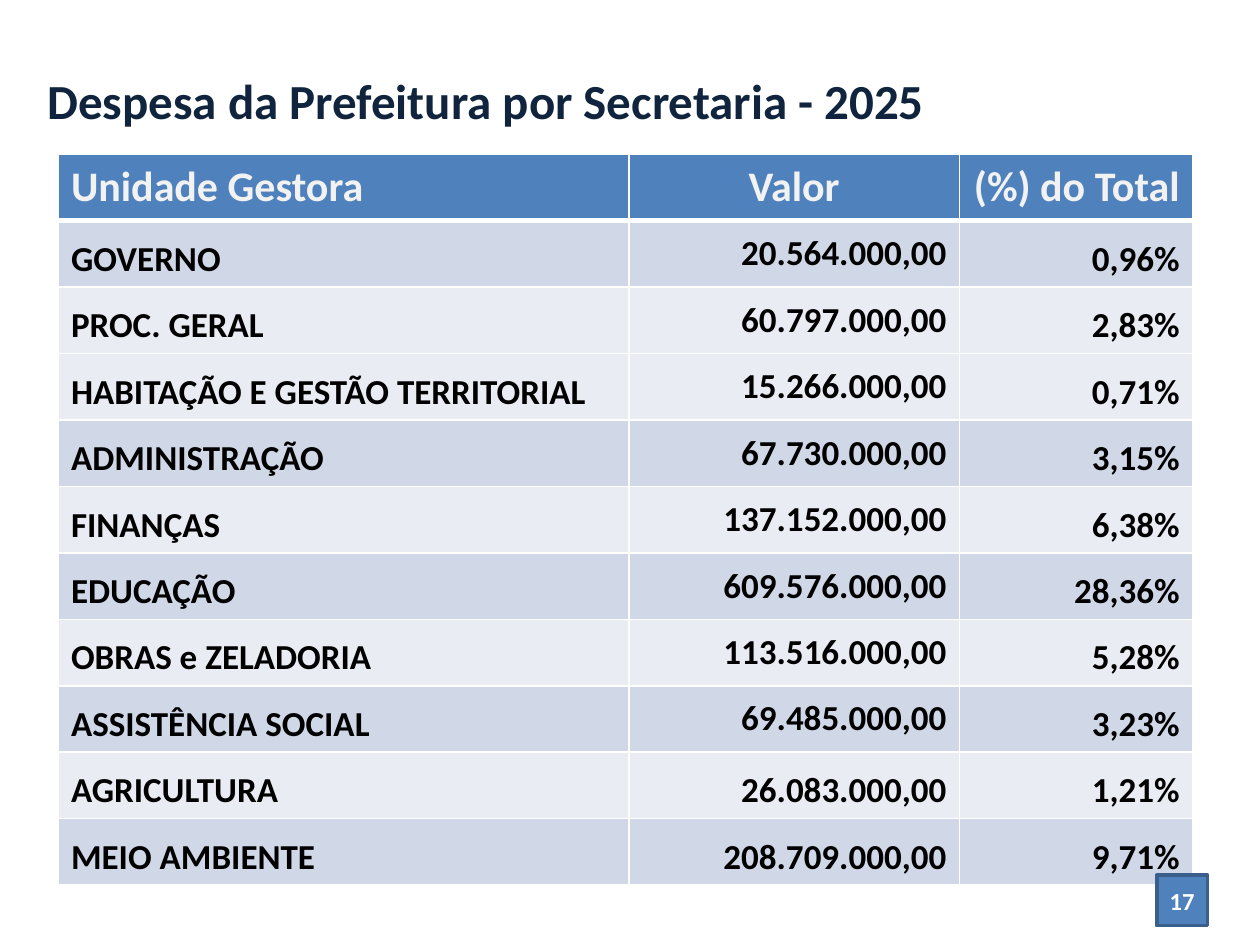
from lxml import etree
from pptx import Presentation
from pptx.dml.color import RGBColor
from pptx.enum import shapes, text
from pptx.oxml import ns
from pptx.util import Pt

NAVY = RGBColor(0x10, 0x24, 0x3E)
BLUE = RGBColor(0x4F, 0x81, 0xBD)
EDGE = RGBColor(0x3A, 0x5F, 0x8B)
DARK_BAND = RGBColor(0xD0, 0xD8, 0xE7)
LIGHT_BAND = RGBColor(0xE9, 0xEC, 0xF3)
PALE = RGBColor(0xF2, 0xF2, 0xF2)
WHITE = RGBColor(0xFF, 0xFF, 0xFF)
BLACK = RGBColor(0, 0, 0)

LEFT, CENTER, RIGHT = text.PP_ALIGN.LEFT, text.PP_ALIGN.CENTER, text.PP_ALIGN.RIGHT
MIDDLE, BOTTOM = text.MSO_ANCHOR.MIDDLE, text.MSO_ANCHOR.BOTTOM

TITLE = "Despesa da Prefeitura por Secretaria - 2025"
PAGE_NUMBER = "17"
HEADER = ("Unidade Gestora", "Valor", "(%) do Total")
EXPENSES = [
    ("GOVERNO", "20.564.000,00", "0,96%", DARK_BAND, MIDDLE),
    ("PROC. GERAL", "60.797.000,00", "2,83%", LIGHT_BAND, MIDDLE),
    ("HABITAÇÃO E GESTÃO TERRITORIAL", "15.266.000,00", "0,71%", LIGHT_BAND, MIDDLE),
    ("ADMINISTRAÇÃO", "67.730.000,00", "3,15%", DARK_BAND, MIDDLE),
    ("FINANÇAS", "137.152.000,00", "6,38%", LIGHT_BAND, MIDDLE),
    ("EDUCAÇÃO", "609.576.000,00", "28,36%", DARK_BAND, MIDDLE),
    ("OBRAS e ZELADORIA", "113.516.000,00", "5,28%", LIGHT_BAND, MIDDLE),
    ("ASSISTÊNCIA SOCIAL", "69.485.000,00", "3,23%", DARK_BAND, MIDDLE),
    ("AGRICULTURA", "26.083.000,00", "1,21%", LIGHT_BAND, BOTTOM),
    ("MEIO AMBIENTE", "208.709.000,00", "9,71%", DARK_BAND, BOTTOM),
]
COLUMN_WIDTHS = (326, 188.8, 133.2)
ROW_HEIGHT = 38
THIN, THICK = 0.96, 3


def write(frame, wording, size, color, align):
    para = frame.paragraphs[0]
    para.text = wording
    para.alignment = align
    font = para.runs[0].font
    font.name, font.size, font.bold = "Calibri", Pt(size), True
    font.color.rgb = color


def add_borders(cell, top, bottom):
    properties = cell._tc.get_or_add_tcPr()
    sides = (("L", THIN), ("R", THIN), ("T", top), ("B", bottom))
    for position, (side, width) in enumerate(sides):
        line = etree.Element(ns.qn(f"a:ln{side}"), w=str(Pt(width)))
        fill = etree.SubElement(line, ns.qn("a:solidFill"))
        etree.SubElement(fill, ns.qn("a:srgbClr"), val=str(WHITE))
        properties.insert(position, line)


def add_title(page):
    box = page.shapes.add_textbox(Pt(20), Pt(26), Pt(533), Pt(62.5))
    box.text_frame.word_wrap = True
    box.text_frame.vertical_anchor = MIDDLE
    write(box.text_frame, TITLE, 28, NAVY, LEFT)


def add_expenses(page):
    rows = [(HEADER, BLUE, PALE, 24, (LEFT, CENTER, RIGHT), (MIDDLE,) * 3)]
    for *words, band, value_anchor in EXPENSES:
        rows.append((words, band, BLACK, 20, (LEFT, RIGHT, RIGHT),
                     (BOTTOM, value_anchor, BOTTOM)))
    table = page.shapes.add_table(
        len(rows), len(HEADER), Pt(33.4), Pt(88),
        Pt(sum(COLUMN_WIDTHS)), Pt(ROW_HEIGHT * len(rows))).table
    for column, width in zip(table.columns, COLUMN_WIDTHS):
        column.width = Pt(width)
    for r, (words, band, color, size, aligns, anchors) in enumerate(rows):
        table.rows[r].height = Pt(ROW_HEIGHT)
        for c, (wording, align, anchor) in enumerate(zip(words, aligns, anchors)):
            cell = table.cell(r, c)
            cell.fill.solid()
            cell.fill.fore_color.rgb = band
            cell.vertical_anchor = anchor
            write(cell.text_frame, wording, size, color, align)
            add_borders(cell, THICK if r == 1 else THIN, THICK if r == 0 else THIN)


def add_page_number(page):
    badge = page.shapes.add_shape(
        shapes.MSO_SHAPE.RECTANGLE, Pt(661), Pt(500), Pt(29), Pt(29))
    badge.shadow.inherit = False
    badge.fill.solid()
    badge.fill.fore_color.rgb = BLUE
    badge.line.color.rgb = EDGE
    badge.line.width = Pt(2)
    frame = badge.text_frame
    frame.margin_left = frame.margin_right = 0
    frame.vertical_anchor = MIDDLE
    write(frame, PAGE_NUMBER, 14, WHITE, CENTER)


def main():
    deck = Presentation()
    deck.slide_width, deck.slide_height = Pt(720), Pt(540)
    page = deck.slides.add_slide(deck.slide_layouts[6])
    add_title(page)
    add_expenses(page)
    add_page_number(page)
    deck.save("out.pptx")


if __name__ == "__main__":
    main()
